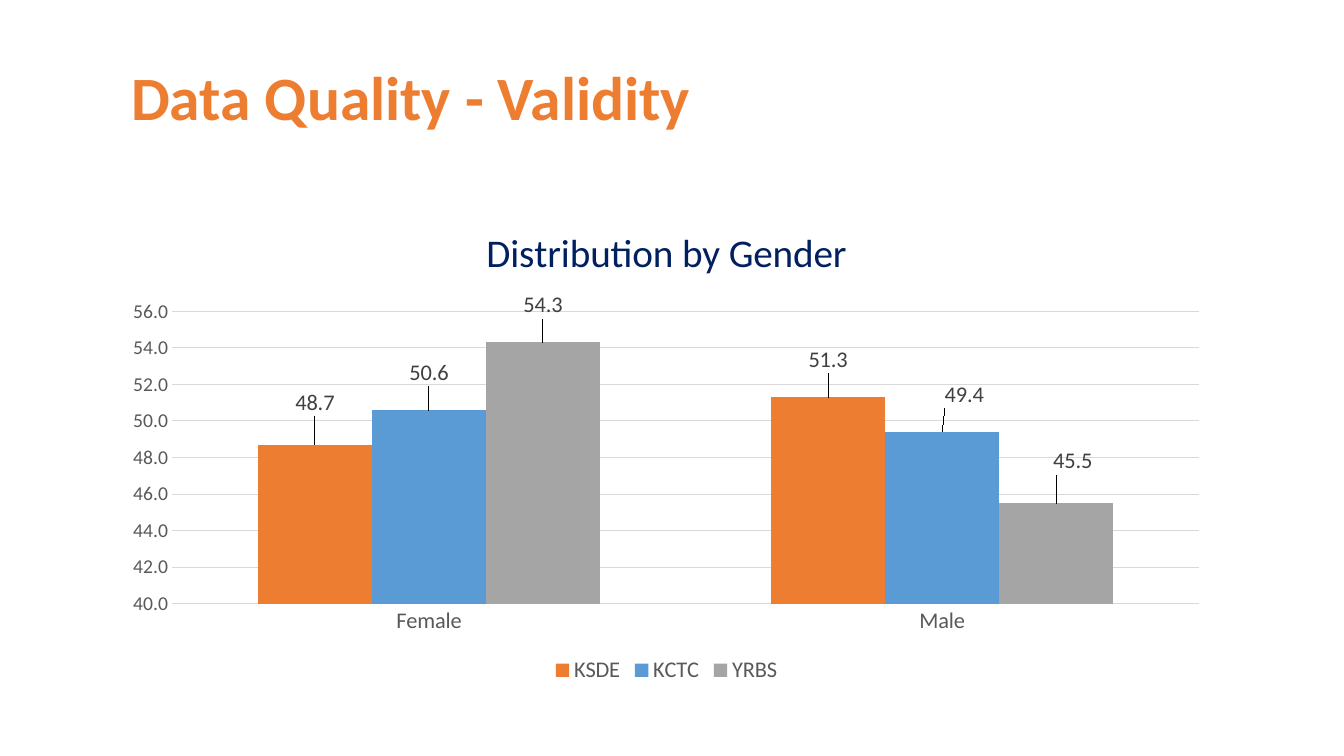
from lxml import etree
from pptx import Presentation
from pptx import util as u
from pptx.chart.data import CategoryChartData
from pptx.dml.color import RGBColor
from pptx.enum import chart as ch, text

COLORS = {"title": "ED7D31", "heading": "002060", "axis": "595959", "label": "404040",
          "grid": "D9D9D9", "KSDE": "ED7D31", "KCTC": "5B9BD5", "YRBS": "A5A5A5"}
GENDERS = ["Female", "Male"]
SHARES = {"KSDE": (48.7, 51.3), "KCTC": (50.6, 49.4), "YRBS": (54.3, 45.5)}
# Label shifts as shares of the chart's size, one (x, y) per gender
SHIFTS = {"KSDE": ((0, -0.05), (0, -0.04)),
          "KCTC": ((0, -0.04), (0.02, -0.04)),
          "YRBS": ((0, -0.04), (0.015, -0.05))}
CHART_W, CHART_H = 11, 4.81


def style(font, size, color, bold=False):
    for name, value in {"name": "Calibri", "size": u.Pt(size), "bold": bold}.items():
        setattr(font, name, value)
    font.color.rgb = RGBColor.from_string(COLORS[color])


def layout_xml(**values):
    ns = "http://schemas.openxmlformats.org/drawingml/2006/chart"
    layout = etree.Element(f"{{{ns}}}layout")
    manual = etree.SubElement(layout, f"{{{ns}}}manualLayout")
    for tag, value in values.items():
        etree.SubElement(manual, f"{{{ns}}}{tag}").set("val", str(value))
    return layout


deck = Presentation()
deck.slide_width, deck.slide_height = u.Inches(13.33), u.Inches(7.5)
slide = deck.slides.add_slide(deck.slide_layouts[5])

# Slide title
title = slide.shapes.title
title.left, title.top, title.width, title.height = map(u.Inches, (1.2, 0.31, 11, 1.38))
title.text_frame.text = "Data Quality - Validity"
title.text_frame.vertical_anchor = text.MSO_ANCHOR.MIDDLE
title.text_frame.auto_size = text.MSO_AUTO_SIZE.NONE
line = title.text_frame.paragraphs[0]
line.alignment, line.line_spacing = text.PP_ALIGN.LEFT, 0.9
style(line.runs[0].font, 44, "title", True)

# Gender chart
data = CategoryChartData(number_format="0.0")
data.categories = GENDERS
for source, values in SHARES.items():
    data.add_series(source, values)
chart = slide.shapes.add_chart(
    ch.XL_CHART_TYPE.COLUMN_CLUSTERED, u.Inches(1.11), u.Inches(2.02),
    u.Inches(CHART_W), u.Inches(CHART_H), data).chart
chart.font.name, chart.font.size = "Calibri", u.Pt(10)

# Chart heading
heading = chart.chart_title
heading.text_frame.text = "Distribution by Gender"
style(heading.text_frame.paragraphs[0].runs[0].font, 28, "heading")
heading.include_in_layout = False
heading._element.find("{*}tx").addnext(layout_xml(
    xMode="edge", yMode="edge", x=3.45 / CHART_W, y=0.17 / CHART_H))

# Plot area
plot_area = chart._chartSpace.chart.plotArea
for old in plot_area.findall("{*}layout"):
    plot_area.remove(old)
plot_area.insert(0, layout_xml(
    layoutTarget="inner", xMode="edge", yMode="edge", x=0.6 / CHART_W,
    y=1.07 / CHART_H, w=10.18 / CHART_W, h=2.9 / CHART_H))

# Axes and legend
for axis, size in ((chart.category_axis, 16), (chart.value_axis, 14)):
    axis.major_tick_mark = axis.minor_tick_mark = ch.XL_TICK_MARK.NONE
    axis.format.line.fill.background()
    style(axis.tick_labels.font, size, "axis")
scale = chart.value_axis
scale.minimum_scale, scale.maximum_scale, scale.major_unit = 40, 56, 2
scale.tick_labels.number_format = "0.0"
scale.tick_labels.number_format_is_linked = False
gridline = scale.major_gridlines.format.line
gridline.width = u.Pt(0.75)
gridline.color.rgb = RGBColor.from_string(COLORS["grid"])
chart.has_legend = True
chart.legend.position = ch.XL_LEGEND_POSITION.BOTTOM
chart.legend.include_in_layout = False
style(chart.legend.font, 16, "axis")

# Columns and their values
columns = chart.plots[0]
columns.gap_width, columns.overlap, columns.vary_by_categories = 150, 0, False
for series in columns.series:
    series.format.fill.solid()
    series.format.fill.fore_color.rgb = RGBColor.from_string(COLORS[series.name])
    labels = series.data_labels
    labels.show_value = True
    labels.number_format, labels.number_format_is_linked = "0.0", False
    labels.position = ch.XL_LABEL_POSITION.OUTSIDE_END
    style(labels.font, 16, "label")
    for i, (x, y) in enumerate(SHIFTS[series.name]):
        label = series.points[i].data_label
        label.position = ch.XL_LABEL_POSITION.OUTSIDE_END
        style(label.font, 16, "label")
        index = labels._element.findall("{*}dLbl")[i].find("{*}idx")
        index.addnext(layout_xml(x=x, y=y))

deck.save("out.pptx")
